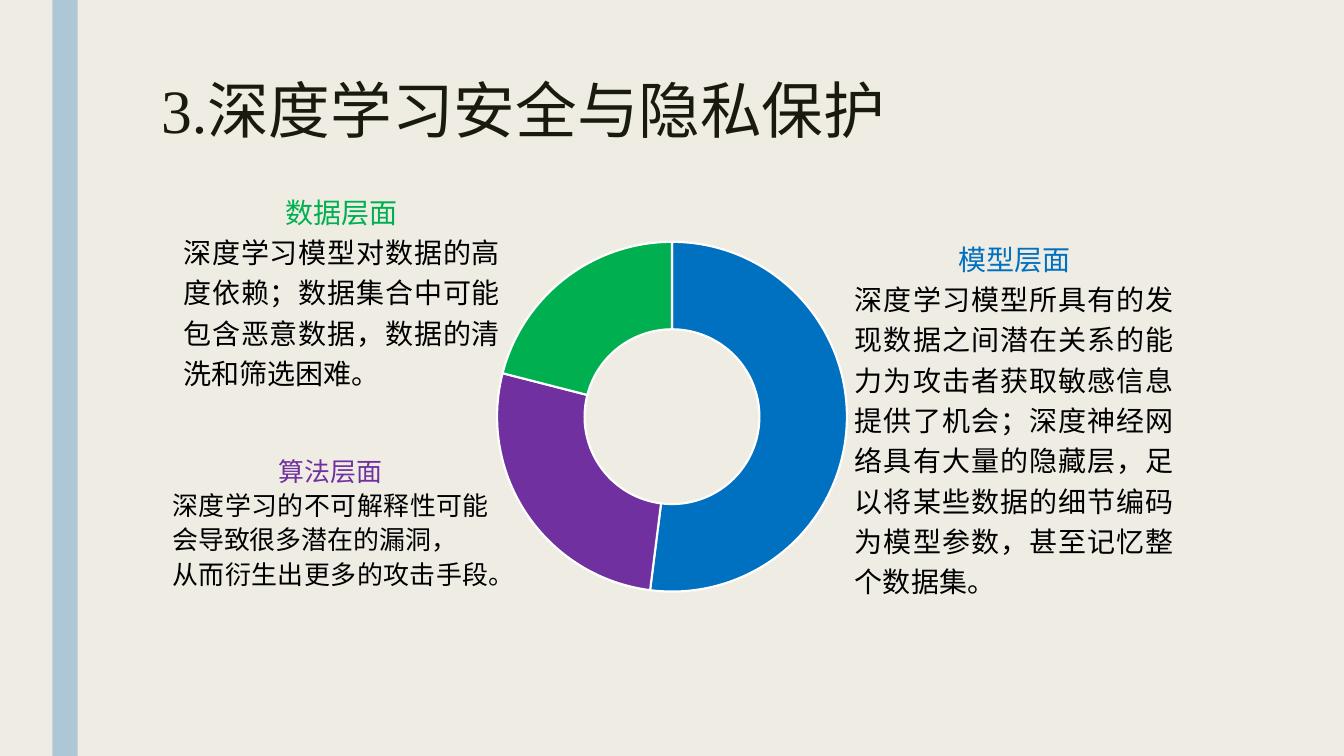
from lxml.etree import SubElement
from pptx import Presentation
from pptx.chart.data import CategoryChartData
from pptx.dml.color import RGBColor
from pptx.enum.chart import XL_CHART_TYPE as ChartType
from pptx.enum.shapes import MSO_SHAPE as Preset
from pptx.enum.text import MSO_ANCHOR as Anchor, PP_ALIGN as Align
from pptx.oxml import parse_xml
from pptx.oxml.ns import nsdecls, qn
from pptx.util import Inches, Pt

# Content
COLORS = {
    "paper": "EFEDE3", "stripe": "ADC7D6", "title": "191B0E", "body": "000000",
    "white": "FFFFFF", "model": "0070C0", "algorithm": "7030A0", "data": "00B050",
}
TITLE = "3.深度学习安全与隐私保护"
SHARES = [("1", 52, "model"), ("2", 27, "algorithm"), ("3", 21, "data")]
LEVELS = [
    {"color": "algorithm", "heading": "算法层面",
     "lines": ["深度学习的不可解释性可能会导致很多潜在的漏洞，", "从而衍生出更多的攻击手段。"],
     "at": (1.71, 4.44, 3.14, 1.93), "size": 18.5, "spacing": 1.1,
     "font": "Lato", "anchor": Anchor.TOP},
    {"color": "data", "heading": "数据层面",
     "lines": ["深度学习模型对数据的高度依赖；数据集合中可能包含恶意数据，数据的清洗和筛选困难。"],
     "at": (1.82, 1.82, 3.14, 2.17), "size": 20, "spacing": 1.2,
     "font": "Arial", "anchor": Anchor.TOP},
    {"color": "model", "heading": "模型层面",
     "lines": ["深度学习模型所具有的发现数据之间潜在关系的能力为攻击者获取敏感信息提供了机会；"
               "深度神经网络具有大量的隐藏层，足以将某些数据的细节编码为模型参数，甚至记忆整个数据集。"],
     "at": (8.48, 2.21, 3.16, 3.85), "size": 20, "spacing": 1.2,
     "font": "Arial", "anchor": Anchor.MIDDLE},
]

# Geometry in inches
WIDTH, HEIGHT = 13.33, 7.5
STRIPE_AT = (0.52, 0, 0.25, HEIGHT)
TITLE_AT = (1.5, 0.75, 10.5, 0.86)
CHART_WIDTH, CHART_HEIGHT, CHART_TOP = 5.62, 3.75, 2.26
CHART_AT = ((WIDTH - CHART_WIDTH) / 2, CHART_TOP, CHART_WIDTH, CHART_HEIGHT)
RING = 3.47
EAST_ASIAN_FONT = "Lato"


def rgb(name):
    return RGBColor.from_string(COLORS[name])


def inches(box):
    return [Inches(length) for length in box]


def add_text(page, at, paragraphs, anchor, side_inset):
    frame = page.shapes.add_textbox(*inches(at)).text_frame
    settings = {"word_wrap": True, "vertical_anchor": anchor,
                "margin_left": Inches(side_inset), "margin_right": Inches(side_inset),
                "margin_top": Inches(0.05), "margin_bottom": Inches(0.05)}
    for name, value in settings.items():
        setattr(frame, name, value)
    for index, (text, color, font, size, align, spacing) in enumerate(paragraphs):
        para = frame.add_paragraph() if index else frame.paragraphs[0]
        para.alignment, para.line_spacing = align, spacing
        span = para.add_run()
        span.text = text
        span.font.name, span.font.size = font, Pt(size)
        span.font.color.rgb = rgb(color)
        properties = span.font._element
        properties.set("lang", "zh-CN")
        SubElement(properties, qn("a:ea")).set("typeface", EAST_ASIAN_FONT)


def add_ring(page):
    data = CategoryChartData()
    data.categories = [label for label, _, _ in SHARES]
    data.add_series("Series 1", [value for _, value, _ in SHARES])
    chart = page.shapes.add_chart(ChartType.DOUGHNUT, *inches(CHART_AT), data).chart
    chart.has_legend = chart.has_title = False
    chart.font.name, chart.font.size = "Lato", Pt(10)
    chart.font.color.rgb = rgb("body")
    plot = chart.plots[0]
    plot.vary_by_categories = True
    for index, (_, _, color) in enumerate(SHARES):
        form = plot.series[0].points[index].format
        form.fill.solid()
        form.fill.fore_color.rgb = rgb(color)
        form.line.color.rgb = rgb("white")
        form.line.width = Pt(1.5)

    # Hole size and centred plot area
    ring = plot._element
    ring.find(qn("c:holeSize")).set("val", "60")
    area = ring.getparent()
    for layout in area.findall(qn("c:layout")):
        area.remove(layout)
    wide, high = RING / CHART_WIDTH, RING / CHART_HEIGHT
    places = {"x": (1 - wide) / 2, "y": (1 - high) / 2, "w": wide, "h": high}
    values = "".join(f'<c:{key} val="{value:.4f}"/>' for key, value in places.items())
    area.insert(0, parse_xml(
        f'<c:layout {nsdecls("c")}><c:manualLayout><c:layoutTarget val="inner"/>'
        f'<c:xMode val="edge"/><c:yMode val="edge"/>{values}</c:manualLayout></c:layout>'))


def main():
    deck = Presentation()
    deck.slide_width, deck.slide_height = Inches(WIDTH), Inches(HEIGHT)
    page = deck.slides.add_slide(deck.slide_layouts[6])
    page.background.fill.solid()
    page.background.fill.fore_color.rgb = rgb("paper")

    # Side stripe and title
    stripe = page.shapes.add_shape(Preset.RECTANGLE, *inches(STRIPE_AT))
    stripe.shadow.inherit = False
    stripe.fill.solid()
    stripe.fill.fore_color.rgb = rgb("stripe")
    stripe.line.fill.background()
    add_text(page, TITLE_AT, [(TITLE, "title", "Times New Roman", 44, Align.LEFT, 0.89)],
             Anchor.TOP, 0.1)

    # Ring and the three levels around it
    add_ring(page)
    for level in LEVELS:
        size, spacing = level["size"], level["spacing"]
        paragraphs = [(level["heading"], level["color"], "Noto Sans CJK SC",
                       size, Align.CENTER, spacing)]
        paragraphs += [(line, "body", level["font"], size, Align.JUSTIFY, spacing)
                       for line in level["lines"]]
        add_text(page, level["at"], paragraphs, level["anchor"], 0)

    deck.save("out.pptx")


if __name__ == "__main__":
    main()
